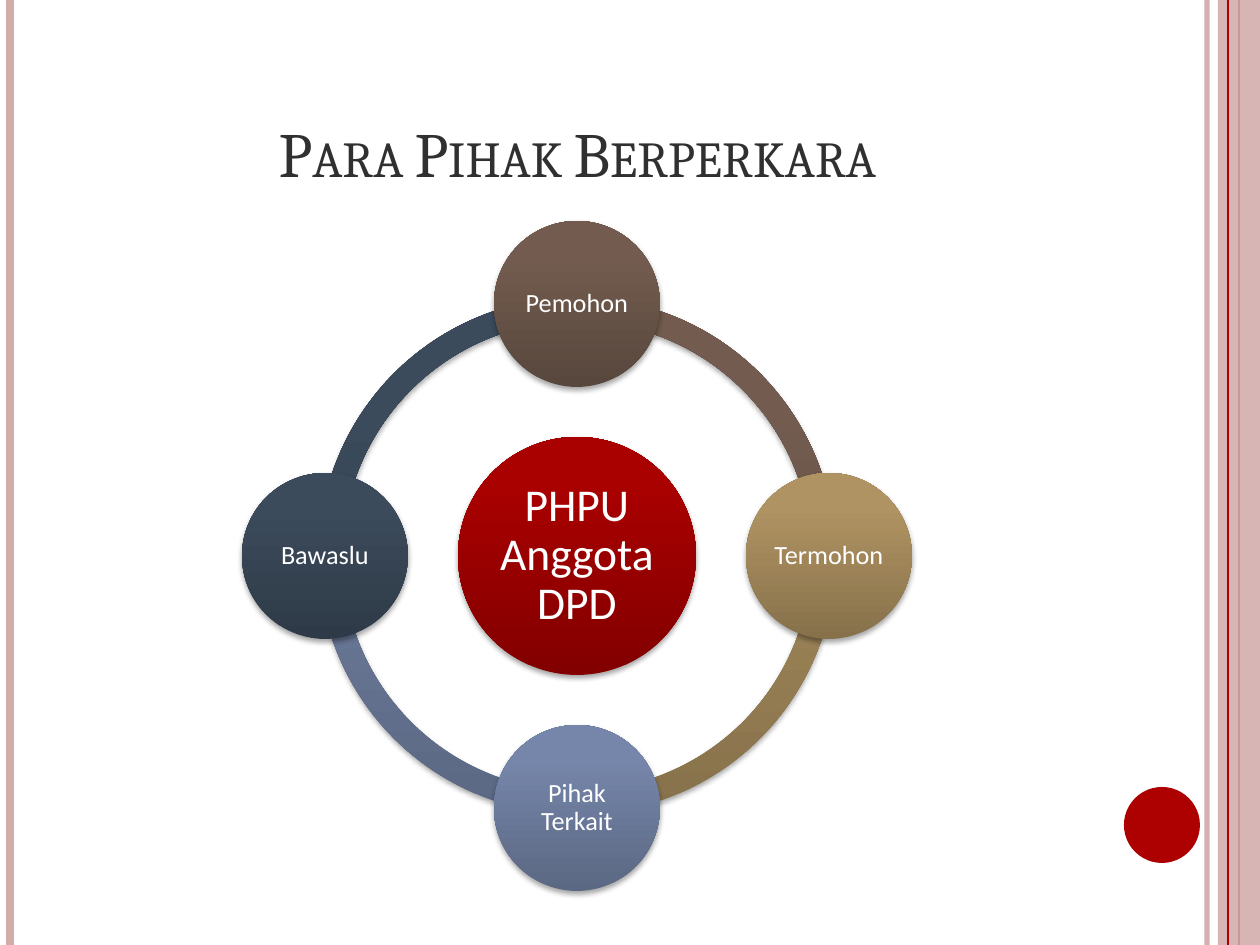
from lxml import etree
from pptx import Presentation, util as u
from pptx.dml.color import RGBColor
from pptx.enum import shapes, text
from pptx.oxml.ns import qn

PX = 914400 / 126
WIDE, HIGH = 1260, 945
WHITE = RGBColor(0xFF, 0xFF, 0xFF)
RED = RGBColor(0xAD, 0x01, 0x01)
PINK = RGBColor(0xD3, 0xAB, 0xAB)
INK = RGBColor(0x30, 0x30, 0x30)

# Gradient stops at 0, 80 and 100 percent, from the bottom up
CRIMSON = [RGBColor(0x82, 0, 0), RGBColor(0xA9, 0, 0), RGBColor(0xA9, 0, 0)]
BROWN = [RGBColor(0x58, 0x47, 0x3D), RGBColor(0x73, 0x5C, 0x4F), RGBColor(0x74, 0x5C, 0x4F)]
GOLD = [RGBColor(0x87, 0x71, 0x4B), RGBColor(0xB0, 0x93, 0x62), RGBColor(0xB2, 0x94, 0x61)]
BLUE = [RGBColor(0x5B, 0x68, 0x83), RGBColor(0x76, 0x86, 0xAA), RGBColor(0x76, 0x87, 0xAB)]
SLATE = [RGBColor(0x2E, 0x3A, 0x47), RGBColor(0x3C, 0x4B, 0x5C), RGBColor(0x3C, 0x4C, 0x5D)]


def write(frame, words, size, font, color, anchor, inset=None, space=None, caps=False):
    frame.word_wrap = True
    frame.vertical_anchor = anchor
    if inset is not None:
        frame.margin_left = frame.margin_right = u.Inches(inset)
        frame.margin_top = frame.margin_bottom = u.Inches(inset)
    para = frame.paragraphs[0]
    para.alignment = text.PP_ALIGN.CENTER
    if space:
        para.line_spacing = space
    run = para.add_run()
    run.text = words
    run.font.size = u.Pt(size)
    run.font.name = font
    run.font.color.rgb = color
    if caps:
        run.font._element.set("cap", "small")


def glossy(kind, x, y, size, stops):
    """Add a square-framed shape centred on x, y with gradient and shadow."""
    left, top = x - size / 2, y - size / 2
    shape = slide.shapes.add_shape(kind, *[u.Emu(round(n * PX)) for n in (left, top, size, size)])
    shape.line.fill.background()
    shape.fill.gradient()
    grad = shape._element.spPr.find(qn("a:gradFill"))
    ramp = grad.find(qn("a:gsLst"))
    for stop in list(ramp):
        ramp.remove(stop)
    for pos, color in zip((0, 80, 100), stops):
        stop = etree.SubElement(ramp, qn("a:gs"), pos=str(pos * 1000))
        etree.SubElement(stop, qn("a:srgbClr"), val=str(color))
    grad.find(qn("a:lin")).set("ang", str(270 * 60000))
    shape.shadow.inherit = False
    glow = etree.SubElement(shape._element.spPr.find(qn("a:effectLst")), qn("a:outerShdw"),
                            blurRad=str(u.Pt(3.1)), dist=str(u.Pt(1.8)),
                            dir=str(90 * 60000), rotWithShape="0")
    black = etree.SubElement(glow, qn("a:srgbClr"), val="000000")
    etree.SubElement(black, qn("a:alpha"), val="35000")
    return shape


deck = Presentation()
deck.slide_width, deck.slide_height = u.Emu(round(WIDE * PX)), u.Emu(round(HIGH * PX))
slide = deck.slides.add_slide(deck.slide_layouts[5])

# Title
title = slide.shapes.title
title.left, title.top, title.width, title.height = [u.Emu(round(n * PX)) for n in (63, 38, 1029, 158)]
write(title.text_frame, "Para Pihak Berperkara", 36, "Cambria", INK,
      text.MSO_ANCHOR.BOTTOM, caps=True)

# Side rules, with the pale band above the first three
for x, color, weight, alpha in [(1207, PINK, 3, 93), (10, PINK, 4.5, 100),
                                (1239, RED, 1.5, 100), (1228, RED, 0.75, 100)]:
    if x == 1228:
        band = slide.shapes.add_shape(shapes.MSO_SHAPE.RECTANGLE,
                                      *[u.Emu(round(n * PX)) for n in (1218, 0, 42, HIGH)])
        band.shadow.inherit = False
        band.line.fill.background()
        band.fill.solid()
        band.fill.fore_color.rgb = PINK
        tint = band._element.spPr.find(qn("a:solidFill"))[0]
        etree.SubElement(tint, qn("a:alpha"), val="87000")
    rule = slide.shapes.add_connector(shapes.MSO_CONNECTOR.STRAIGHT,
                                      *[u.Emu(round(n * PX)) for n in (x, 0, x, HIGH)])
    rule.line.color.rgb = color
    rule.line.width = u.Pt(weight)
    if alpha < 100:
        tint = rule.line._ln.find(qn("a:solidFill"))[0]
        etree.SubElement(tint, qn("a:alpha"), val=str(alpha * 1000))
    etree.SubElement(rule._element.spPr, qn("a:effectLst"))

# Corner dot
dot = slide.shapes.add_shape(shapes.MSO_SHAPE.OVAL,
                             *[u.Emu(round(n * PX)) for n in (1124, 787, 76, 76)])
dot.shadow.inherit = False
dot.line.fill.background()
dot.fill.solid()
dot.fill.fore_color.rgb = RED

# Parties clockwise from the top: name, colours, direction from the hub
MID_X, MID_Y, ORBIT = 577, 556, 252
parties = [("Pemohon", BROWN, 0, -1), ("Termohon", GOLD, 1, 0),
           ("Pihak Terkait", BLUE, 0, 1), ("Bawaslu", SLATE, -1, 0)]

# Ring of quarter arcs, each starting at its party (angles: 54 is a quarter turn)
for i, (name, stops, dx, dy) in reversed(list(enumerate(parties))):
    arc = glossy(shapes.MSO_SHAPE.BLOCK_ARC, MID_X, MID_Y, 517, stops)
    arc.adjustments[0] = (i + 3) % 4 * 54
    arc.adjustments[1] = i * 54
    arc.adjustments[2] = 0.046

# Hub and party circles
hub = glossy(shapes.MSO_SHAPE.OVAL, MID_X, MID_Y, 238, CRIMSON)
write(hub.text_frame, "PHPU Anggota DPD", 26, "Calibri", WHITE,
      text.MSO_ANCHOR.MIDDLE, inset=0.04, space=0.9)
for name, stops, dx, dy in parties:
    node = glossy(shapes.MSO_SHAPE.OVAL, MID_X + dx * ORBIT, MID_Y + dy * ORBIT, 166, stops)
    write(node.text_frame, name, 15, "Calibri", WHITE,
          text.MSO_ANCHOR.MIDDLE, inset=0.02, space=0.9)

deck.save("out.pptx")
